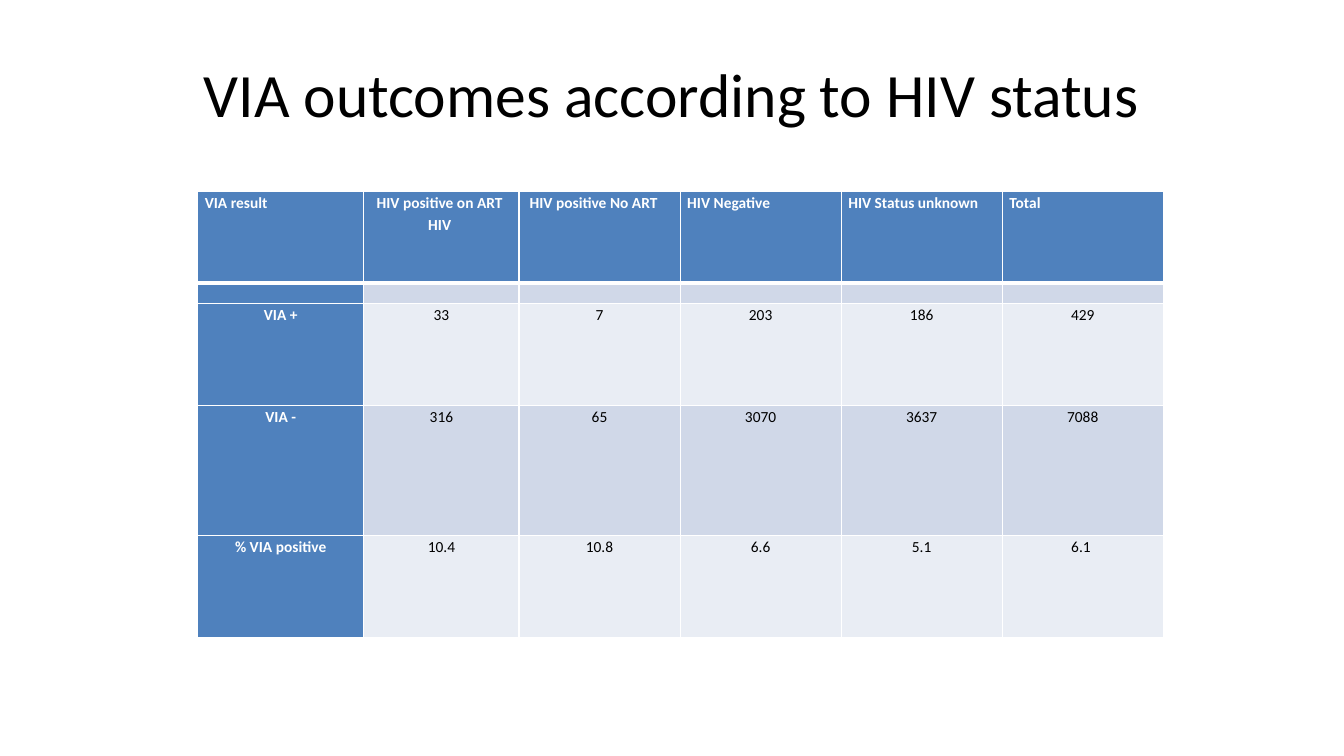
from dataclasses import dataclass

from lxml import etree
from pptx import Presentation
from pptx import util as u
from pptx.dml.color import RGBColor
from pptx.enum import text
from pptx.oxml.ns import qn


@dataclass(frozen=True)
class Theme:
    font: str = "Calibri"
    ink: str = "000000"
    white: str = "FFFFFF"
    accent: str = "4F81BD"
    bands: tuple = ("E9EDF4", "D0D8E8")
    title_size: int = 44
    cell_size: int = 11
    spacer_size: int = 8
    grid: int = 1
    header_rule: int = 3


THEME = Theme()
LEFT, CENTER = text.PP_ALIGN.LEFT, text.PP_ALIGN.CENTER

# Each header is its lines and their alignment
HEADERS = [
    (["VIA result"], LEFT),
    (["HIV positive on ART ", "HIV "], CENTER),
    ([" HIV positive No ART"], LEFT),
    (["HIV Negative"], LEFT),
    (["HIV Status unknown"], LEFT),
    (["Total"], LEFT),
]
OUTCOMES = [
    [""] * len(HEADERS),
    ["VIA +", "33", "7", "203", "186", "429"],
    ["VIA -", "316", "65", "3070", "3637", "7088"],
    ["% VIA positive", "10.4", "10.8", "6.6", "5.1", "6.1 "],
]
COLUMN_WIDTHS = [4.19, 3.91] + [4.06] * 4
ROW_HEIGHTS = [2.31, 0.51, 2.57, 3.28, 2.57]


def add_run(paragraph, words, size, color, bold=False):
    run = paragraph.add_run()
    run.text = words
    run.font.name = THEME.font
    run.font.size = u.Pt(size)
    run.font.bold = bold
    run.font.color.rgb = RGBColor.from_string(color)


def add_title(slide, words):
    title = slide.shapes.title
    title.left, title.top = u.Cm(1.69), u.Cm(0.76)
    title.width, title.height = u.Cm(30.48), u.Cm(3.18)
    title.text_frame.vertical_anchor = text.MSO_ANCHOR.MIDDLE
    heading = title.text_frame.paragraphs[0]
    heading.alignment = CENTER
    add_run(heading, words, THEME.title_size, THEME.ink)


def set_borders(cell, top, bottom):
    properties = cell._tc.get_or_add_tcPr()
    widths = {"a:lnL": THEME.grid, "a:lnR": THEME.grid, "a:lnT": top, "a:lnB": bottom}
    for side, width in widths.items():
        line = etree.SubElement(properties, qn(side), w=str(u.Pt(width)))
        fill = etree.SubElement(line, qn("a:solidFill"))
        etree.SubElement(fill, qn("a:srgbClr"), val=THEME.white)


def fill_cell(cell, lines, alignment, background, emphasized):
    cell.margin_left = cell.margin_right = u.Cm(0.18)
    cell.margin_top = cell.margin_bottom = 0
    cell.fill.solid()
    cell.fill.fore_color.rgb = RGBColor.from_string(background)
    frame = cell.text_frame
    color = THEME.white if emphasized else THEME.ink
    for index, words in enumerate(lines):
        paragraph = frame.add_paragraph() if index else frame.paragraphs[0]
        paragraph.alignment = alignment
        if words:
            paragraph.line_spacing = 1.15
            add_run(paragraph, words, THEME.cell_size, color, emphasized)
        else:
            # Small empty text keeps the spacer row thin
            etree.SubElement(paragraph._p, qn("a:endParaRPr"),
                             sz=str(THEME.spacer_size * 100))


def add_outcome_table(slide):
    rows = [HEADERS] + [[([value], CENTER) for value in row] for row in OUTCOMES]
    table = slide.shapes.add_table(
        len(rows), len(HEADERS), u.Cm(4.98), u.Cm(4.82),
        u.Cm(sum(COLUMN_WIDTHS)), u.Cm(sum(ROW_HEIGHTS))).table
    for column, width in zip(table.columns, COLUMN_WIDTHS):
        column.width = u.Cm(width)
    for row, height in zip(table.rows, ROW_HEIGHTS):
        row.height = u.Cm(height)

    for r, row in enumerate(rows):
        top = THEME.header_rule if r == 1 else THEME.grid
        bottom = THEME.header_rule if r == 0 else THEME.grid
        for c, (lines, alignment) in enumerate(row):
            is_heading = r == 0 or c == 0
            background = THEME.accent if is_heading else THEME.bands[r % 2]
            cell = table.cell(r, c)
            set_borders(cell, top, bottom)
            fill_cell(cell, lines, alignment, background, is_heading)


def main():
    presentation = Presentation()
    presentation.slide_width, presentation.slide_height = u.Cm(33.87), u.Cm(19.05)
    slide = presentation.slides.add_slide(presentation.slide_layouts[5])
    add_title(slide, "VIA outcomes according to HIV status")
    add_outcome_table(slide)
    presentation.save("out.pptx")


if __name__ == "__main__":
    main()
